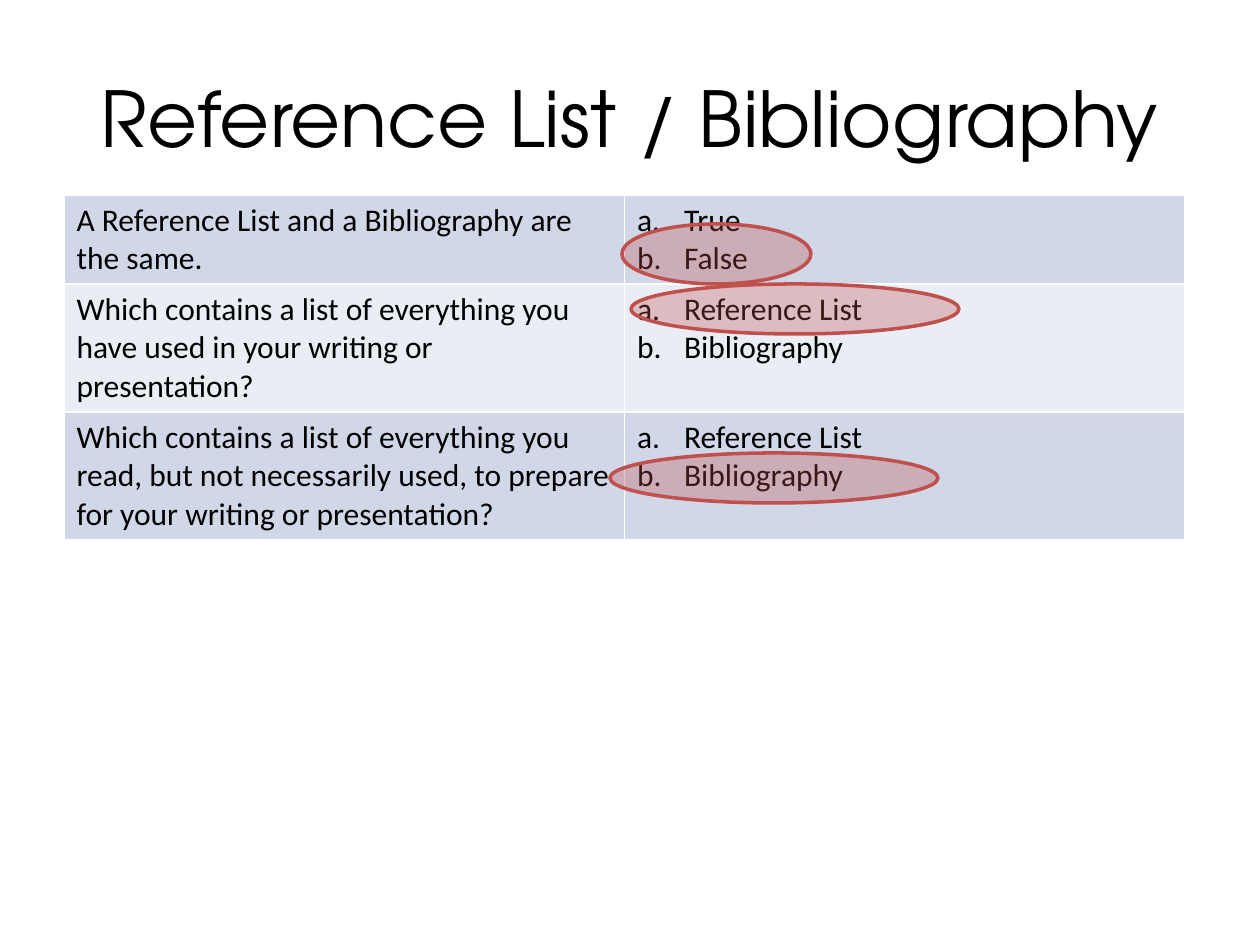
from lxml import etree
from pptx import Presentation
from pptx.dml.color import RGBColor
from pptx.enum.shapes import MSO_SHAPE
from pptx.enum.text import MSO_ANCHOR, PP_ALIGN
from pptx.oxml.ns import qn
from pptx.util import Pt

OVAL = MSO_SHAPE.OVAL
MIDDLE = MSO_ANCHOR.MIDDLE
CENTER = PP_ALIGN.CENTER
PX = 914400 // 126

THEME = {
    "ink": "000000", "rule": "FFFFFF", "mark": "C0504D",
    "bands": ["D0D8E8", "E9EDF4"],
    "title": ("TeX Gyre Adventor", 44), "body": ("Calibri", 18),
}


def put(para, text, role):
    run = para.add_run()
    run.text = text
    name, size = THEME[role]
    run.font.name = name
    run.font.size = Pt(size)
    run.font.color.rgb = RGBColor.from_string(THEME["ink"])


def edge(cell):
    props = cell._tc.get_or_add_tcPr()
    for side in ("lnL", "lnR", "lnT", "lnB"):
        line = etree.SubElement(props, qn(f"a:{side}"), w=str(Pt(1)))
        fill = etree.SubElement(line, qn("a:solidFill"))
        etree.SubElement(fill, qn("a:srgbClr"), val=THEME["rule"])


deck = Presentation()
deck.slide_width = 1260 * PX
deck.slide_height = 945 * PX
slide = deck.slides.add_slide(deck.slide_layouts[6])

title = slide.shapes.add_textbox(63 * PX, 38 * PX, 1134 * PX, 157 * PX)
frame = title.text_frame
frame.word_wrap = True
frame.vertical_anchor = MIDDLE
frame.paragraphs[0].alignment = CENTER
put(frame.paragraphs[0], "Reference List / Bibliography", "title")

quiz = [
    (89, "A Reference List and a Bibliography are the same.", ["True", "False"]),
    (128, "Which contains a list of everything you have used in your writing or "
          "presentation?", ["Reference List", "Bibliography"]),
    (128, "Which contains a list of everything you read, but not necessarily used, "
          "to prepare for your writing or presentation?",
     ["Reference List", "Bibliography"]),
]
high = sum(row[0] for row in quiz)
table = slide.shapes.add_table(
    len(quiz), 2, 64 * PX, 195 * PX, 1121 * PX, high * PX).table
table.first_row = False
table.horz_banding = False

for i, (tall, ask, picks) in enumerate(quiz):
    table.rows[i].height = tall * PX
    for j, lines in enumerate(([ask], picks)):
        cell = table.cell(i, j)
        edge(cell)
        cell.fill.solid()
        cell.fill.fore_color.rgb = RGBColor.from_string(THEME["bands"][i % 2])
        for n, text in enumerate(lines):
            frame = cell.text_frame
            para = frame.add_paragraph() if n else frame.paragraphs[0]
            if j == 1:
                props = para._p.get_or_add_pPr()
                props.set("marL", str(47 * PX))
                props.set("indent", str(-47 * PX))
                etree.SubElement(props, qn("a:buFont"), typeface="+mj-lt")
                etree.SubElement(props, qn("a:buAutoNum"), type="alphaLcPeriod")
            put(para, text, "body")

rings = [(622, 224, 189, 60), (631, 284, 328, 50), (610, 453, 328, 50)]
for box in rings:
    ring = slide.shapes.add_shape(OVAL, *[n * PX for n in box])
    ring.shadow.inherit = False
    ring.fill.solid()
    ring.fill.fore_color.rgb = RGBColor.from_string(THEME["mark"])
    tint = ring._element.spPr.find(qn("a:solidFill"))[0]
    etree.SubElement(tint, qn("a:alpha"), val="31000")
    ring.line.color.rgb = RGBColor.from_string(THEME["mark"])
    ring.line.width = Pt(2)

deck.save("out.pptx")
